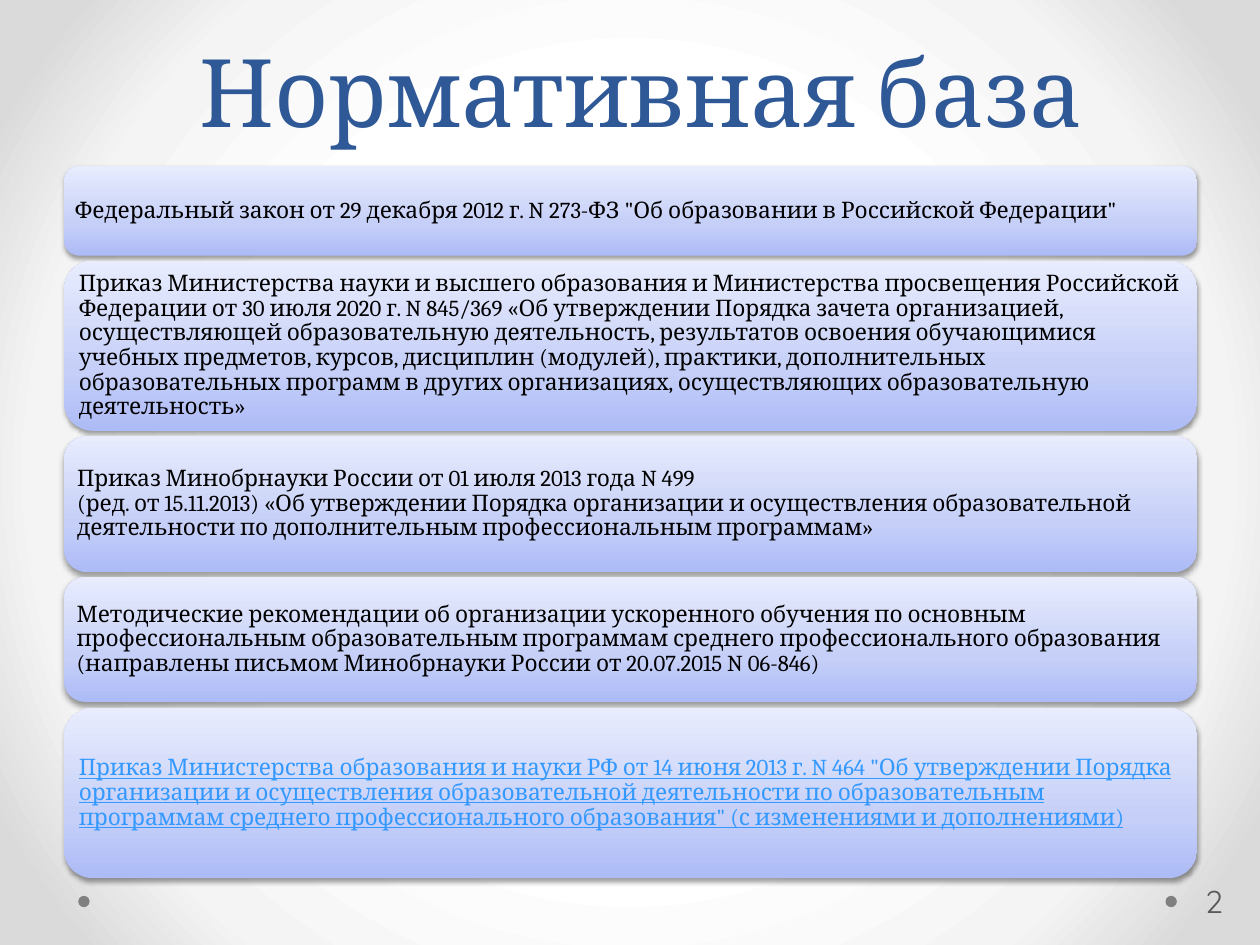
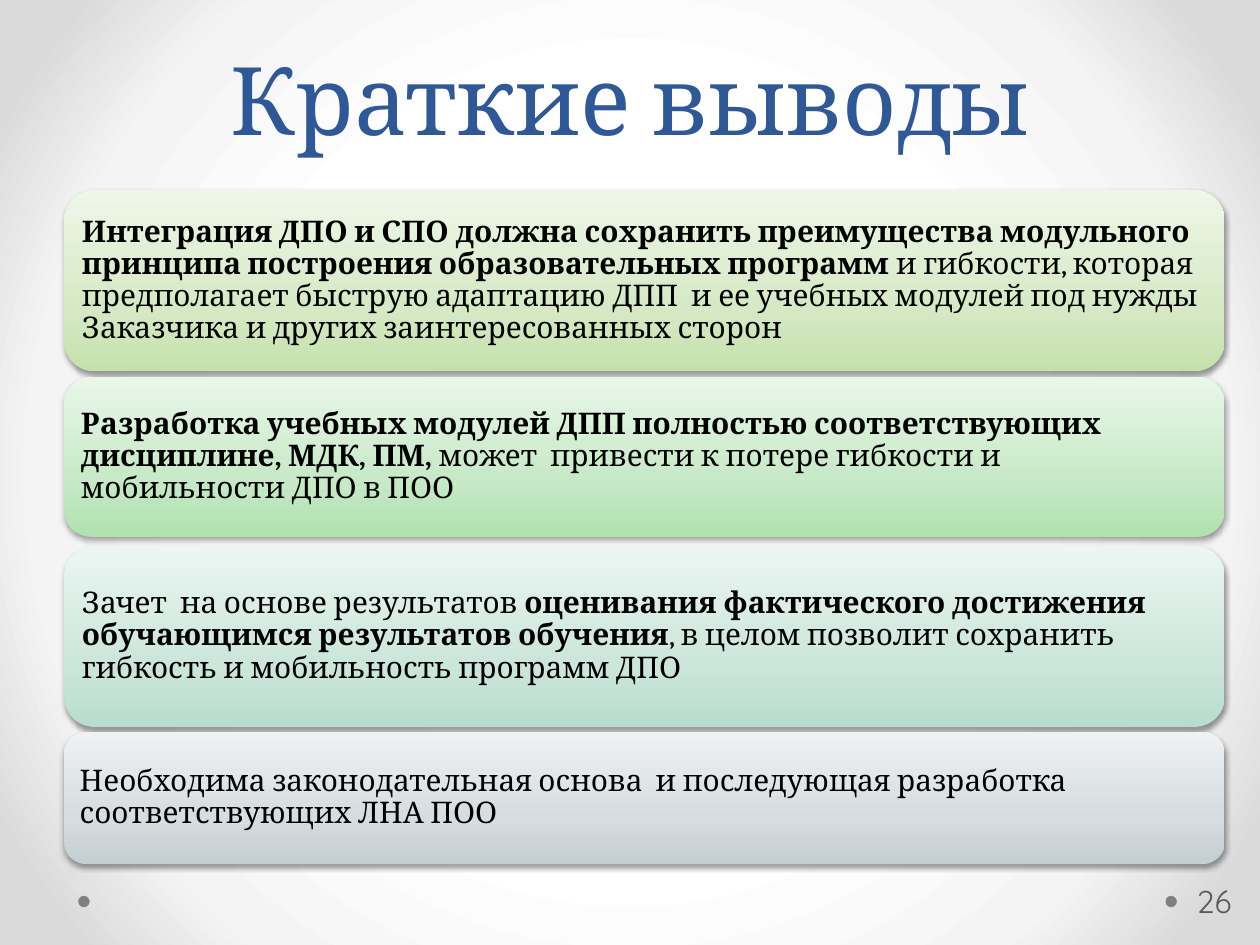
from pptx import Presentation
from pptx.dml.color import RGBColor
from pptx.enum.shapes import MSO_SHAPE as Shape
from pptx.enum.text import MSO_ANCHOR as Anchor, MSO_AUTO_SIZE as AutoSize, PP_ALIGN as Align
from pptx.oxml import parse_xml
from pptx.oxml.ns import nsdecls, qn
from pptx.util import Pt

# Shared colours and fonts
BLACK = RGBColor(0x00, 0x00, 0x00)
TITLE_BLUE = RGBColor(0x2F, 0x58, 0x97)
LINK_BLUE = RGBColor(0x33, 0x99, 0xFF)
DOT_GRAY = RGBColor(0x80, 0x80, 0x80)
NUMBER_GRAY = RGBColor(0x59, 0x59, 0x59)
WHITE = RGBColor(0xFF, 0xFF, 0xFF)
PALE_GRAY = RGBColor(0xF4, 0xF4, 0xF4)
EDGE_GRAY = RGBColor(0xDA, 0xDA, 0xDA)
# Card gradients run from the bottom edge to the top edge
BLUE = RGBColor(0xAD, 0xBB, 0xF6), RGBColor(0xC5, 0xCF, 0xF8), RGBColor(0xE8, 0xEC, 0xFD)
OLIVE = RGBColor(0xC5, 0xE1, 0xAB), RGBColor(0xD6, 0xE9, 0xC5), RGBColor(0xEF, 0xF7, 0xE9)
GREEN = RGBColor(0xAE, 0xE2, 0xAE), RGBColor(0xC7, 0xE9, 0xC7), RGBColor(0xE9, 0xF7, 0xE9)
TEAL = RGBColor(0xB6, 0xDD, 0xCD), RGBColor(0xCC, 0xE6, 0xDB), RGBColor(0xEB, 0xF6, 0xF2)
GRAY = RGBColor(0xC5, 0xCE, 0xD2), RGBColor(0xD6, 0xDC, 0xDF), RGBColor(0xEF, 0xF2, 0xF3)
SERIF, SANS = "Cambria", "Quicksand"

UPWARD = '<a:lin ang="16200000" scaled="0"/>'
FROM_CENTRE = ('<a:path path="circle"><a:fillToRect l="50000" t="50000" '
               'r="50000" b="50000"/></a:path>')
SHADOW = (f'<a:effectLst {nsdecls("a")}><a:outerShdw blurRad="{Pt(3.1)}" dist="{Pt(1.6)}" '
          'dir="5400000" rotWithShape="0"><a:srgbClr val="000000"><a:alpha val="38000"/>'
          '</a:srgbClr></a:outerShdw></a:effectLst>')

# Slide content: each card is top, height, gradient and its spans of text and format
BOLD = {"bold": True}
SLIDES = [
    {"title": "Нормативная база", "title_box": (42.5, 15.1, 648, 72), "number": "2",
     "card_width": 647.3, "size": 13, "inset": 3.6, "cards": [
        (95, 51.1, BLUE, [
            ("Федеральный закон от 29 декабря 2012 г. N 273-ФЗ "
             "\"Об образовании в Российской Федерации\"", {})]),
        (149, 97.2, BLUE, [
            ("Приказ Министерства науки и высшего образования и Министерства просвещения "
             "Российской Федерации от 30 июля 2020 г. N 845/369 «Об утверждении Порядка зачета "
             "организацией, осуществляющей образовательную деятельность, результатов освоения "
             "обучающимися учебных предметов, курсов, дисциплин (модулей), практики, "
             "дополнительных образовательных программ в других организациях, осуществляющих "
             "образовательную деятельность»", {})]),
        (249.1, 77.8, BLUE, [
            ("Приказ Минобрнауки России от 01 июля 2013 года N 499", {}),
            ("\n", {}),
            ("(ред. от 15.11.2013) «Об утверждении Порядка организации и осуществления "
             "образовательной деятельности по дополнительным профессиональным программам»", {})]),
        (329.8, 71.3, BLUE, [
            ("Методические рекомендации об организации ускоренного обучения по основным "
             "профессиональным образовательным программам среднего профессионального образования "
             "(направлены письмом Минобрнауки России от 20.07.2015 N 06-846)", {})]),
        (404.6, 97.2, BLUE, [
            ("Приказ Министерства образования и науки РФ от 14 июня 2013 г. N 464 "
             "\"Об утверждении Порядка организации и осуществления образовательной деятельности "
             "по образовательным программам среднего профессионального образования\" "
             "(с изменениями и дополнениями)", {"underline": True, "color": LINK_BLUE})]),
     ]},
    {"title": "Краткие выводы", "title_box": (36.7, 15.1, 647.3, 77), "number": "26",
     "card_width": 663.1, "size": 17, "inset": 5.1, "cards": [
        (108.7, 103.5, OLIVE, [
            ("Интеграция ДПО и СПО должна сохранить преимущества модульного принципа "
             "построения образовательных программ", BOLD),
            (" и гибкости, которая предполагает быструю адаптацию ДПП  и ее учебных модулей "
             "под нужды Заказчика и других заинтересованных сторон", {})]),
        (215.3, 91.5, GREEN, [
            ("Разработка учебных модулей ДПП полностью соответствующих дисциплине, МДК, ПМ,", BOLD),
            (" может  привести к потере гибкости и мобильности ДПО в ПОО", {})]),
        (311.9, 103.5, TEAL, [
            ("Зачет  на основе результатов ", {}),
            ("оценивания фактического достижения обучающимся результатов обучения", BOLD),
            (", в целом позволит сохранить гибкость и мобильность программ ДПО", {})]),
        (418.2, 75.6, GRAY, [
            ("Необходима законодательная основа  и последующая разработка "
             "соответствующих ЛНА ПОО", {})]),
     ]},
]


def gradient(positions, colors, direction):
    """Return a gradient fill element."""
    stops = "".join(f'<a:gs pos="{position * 1000}"><a:srgbClr val="{color}"/></a:gs>'
                    for position, color in zip(positions, colors))
    return parse_xml(f'<a:gradFill {nsdecls("a")} rotWithShape="1">'
                     f'<a:gsLst>{stops}</a:gsLst>{direction}</a:gradFill>')


def write(frame, spans, align, frame_format, font_format):
    """Fill a text frame with one paragraph of formatted spans."""
    for name, value in frame_format.items():
        setattr(frame, name, value)
    para = frame.paragraphs[0]
    para.alignment = align
    for text, extra in spans:
        if text == "\n":
            para.add_line_break()
            continue
        span = para.add_run()
        span.text = text
        for name, value in (font_format | extra).items():
            if name == "color":
                span.font.color.rgb = value
            else:
                setattr(span.font, name, value)
    return para


deck = Presentation()
deck.slide_width, deck.slide_height = Pt(720), Pt(540)

# Background shared through the master
master = deck.slide_master
master.background.fill.gradient()
old_fill = next(master.element.iter(qn("a:gradFill")))
old_fill.getparent().replace(
    old_fill, gradient((50, 76, 92), (WHITE, PALE_GRAY, EDGE_GRAY), FROM_CENTRE))

for content in SLIDES:
    page = deck.slides.add_slide(deck.slide_layouts[5])

    # Title
    title = page.shapes.title
    title.left, title.top, title.width, title.height = map(Pt, content["title_box"])
    write(title.text_frame, [(content["title"], {})], Align.CENTER,
          {"vertical_anchor": Anchor.BOTTOM, "word_wrap": True, "auto_size": AutoSize.NONE},
          {"name": SERIF, "size": Pt(54), "color": TITLE_BLUE})

    # Footer dots and page number
    for left in (44.7, 666):
        dot = page.shapes.add_shape(Shape.OVAL, Pt(left), Pt(511.9), Pt(6.5), Pt(6.5))
        dot.shadow.inherit = False
        dot.fill.solid()
        dot.fill.fore_color.rgb = DOT_GRAY
        dot.line.fill.background()
    number = page.shapes.add_textbox(Pt(672.5), Pt(500.4), Pt(44), Pt(28.8))
    write(number.text_frame, [(content["number"], {})], Align.CENTER,
          {"vertical_anchor": Anchor.MIDDLE, "word_wrap": True,
           "margin_left": Pt(2.2), "margin_right": Pt(3.6)},
          {"name": SANS, "size": Pt(18), "color": NUMBER_GRAY})

    # Cards
    inset = Pt(content["inset"])
    card_frame = {"vertical_anchor": Anchor.MIDDLE, "word_wrap": True}
    card_frame |= {f"margin_{side}": inset for side in ("left", "top", "right", "bottom")}
    for top, height, colors, spans in content["cards"]:
        card = page.shapes.add_shape(Shape.ROUNDED_RECTANGLE, Pt(36.7), Pt(top),
                                     Pt(content["card_width"]), Pt(height))
        card.line.fill.background()
        properties = card.element.spPr
        properties.find(qn("a:prstGeom")).addnext(gradient((0, 35, 100), colors, UPWARD))
        properties.append(parse_xml(SHADOW))
        para = write(card.text_frame, spans, Align.LEFT, card_frame,
                     {"name": SERIF, "size": Pt(content["size"]), "color": BLACK})
        para.line_spacing = 0.9

deck.save("out.pptx")
